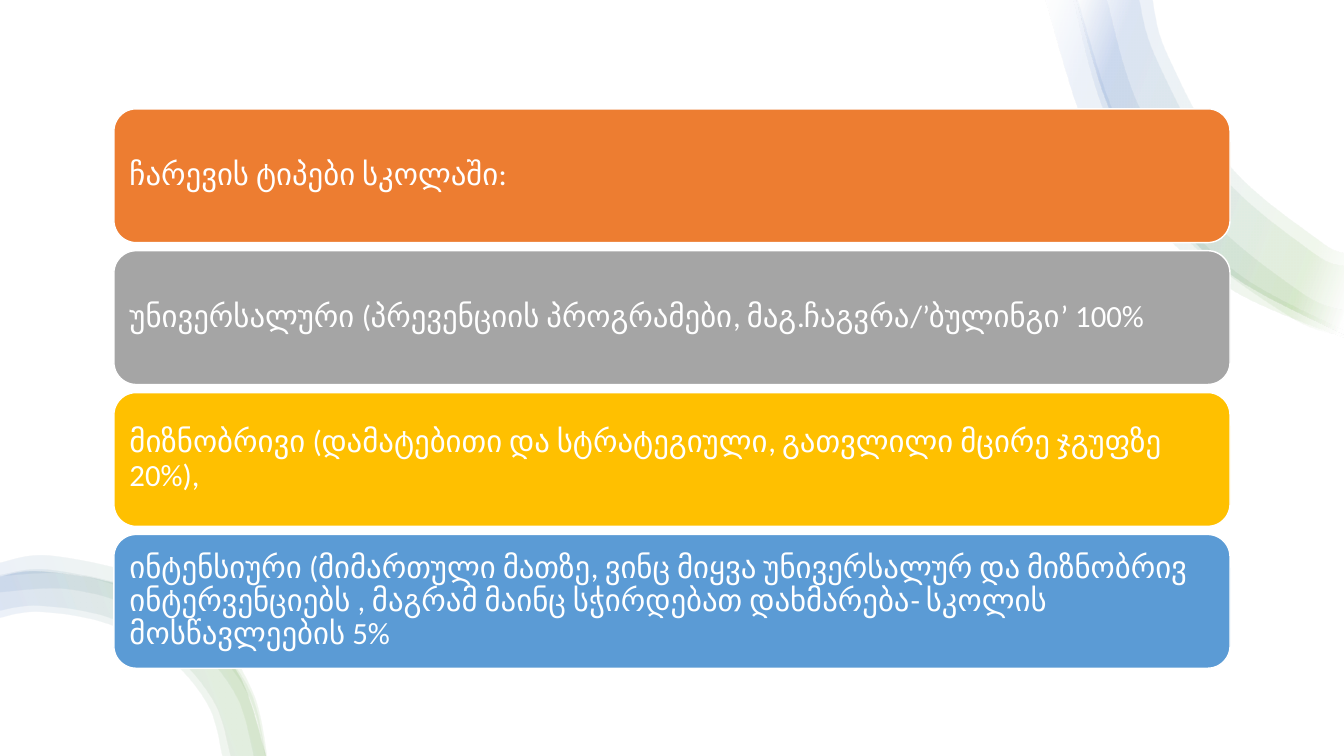
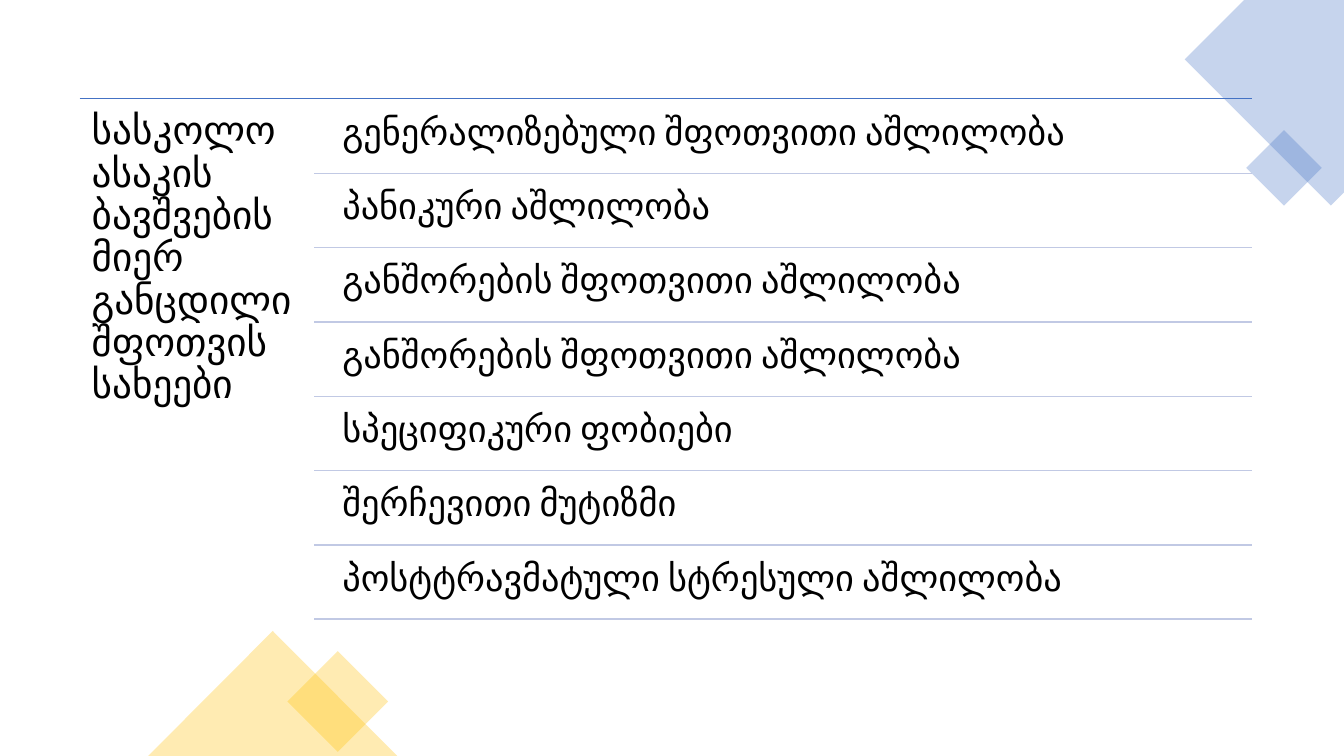
from lxml import etree
from pptx import Presentation
from pptx.dml.color import RGBColor
from pptx.enum.shapes import MSO_CONNECTOR, MSO_SHAPE
from pptx.enum.text import MSO_ANCHOR, PP_ALIGN
from pptx.oxml.ns import qn
from pptx.util import Inches, Pt

LINE = MSO_CONNECTOR.STRAIGHT
ROUND = MSO_SHAPE.ROUNDED_RECTANGLE
PLAIN = MSO_SHAPE.RECTANGLE
DIAMOND = MSO_SHAPE.DIAMOND
PEAK = MSO_SHAPE.ISOSCELES_TRIANGLE
MIDDLE, TOP = MSO_ANCHOR.MIDDLE, MSO_ANCHOR.TOP
LEFT = PP_ALIGN.LEFT

WIDE, HIGH = 13.33, 7.5
FONT = "Calibri"
COLORS = {
    "white": "FFFFFF", "black": "000000", "blue": "4472C4",
    "green": "70AD47", "gold": "FFC000", "orange": "ED7D31",
    "gray": "A5A5A5", "sky": "5B9BD5", "rule": "C1C9E4",
}
FADE = [(2, "white"), (16, "green"), (85, "blue"), (100, "white")]

ARC = [(0.35, 0), (0.67, 1.07), (1.19, 2), (1.9, 2.74), (3, 3.32)]
CREST = [
    ([(0.04, 0), (0.45, 1.31), (0.97, 2.08), (1.88, 2.87), (3, 3.35)],
     [(3, 3.28), (1.97, 2.73), (1.26, 2.01), (0.73, 1.15), (0.36, 0)]),
    (ARC, [(3, 2.51), (2.74, 2.38), (1.86, 1.64), (1.25, 0.55), (1.1, 0)]),
    ([(0.32, 0), (0.66, 1.19), (1.4, 2.33), (2.46, 3.14), (3, 3.33)],
     [(3, 3.08), (2.57, 2.9), (1.62, 2.11), (0.96, 1.04), (0.65, 0)]),
    (ARC, [(3, 2.64), (2.68, 2.5), (1.77, 1.72), (1.14, 0.59), (0.97, 0)]),
]
BEND = [(0, 0.22), (0.4, 0.17), (1.17, 0.3), (1.85, 0.66), (2.36, 1.19), (2.63, 2)]
FOOT = [
    (BEND, [(2.2, 2), (2.06, 1.5), (1.66, 1.02), (1.07, 0.69), (0.4, 0.57), (0, 0.63)]),
    (BEND, [(2.28, 2), (2.12, 1.47), (1.7, 0.97), (1.09, 0.63), (0.4, 0.51), (0, 0.56)]),
    ([(0, 0.21), (0.5, 0.16), (1.42, 0.37), (2.03, 0.77), (2.47, 1.35), (2.63, 2)],
     [(2.51, 2), (2.34, 1.41), (1.92, 0.89), (1.34, 0.53), (0.67, 0.35), (0, 0.38)]),
    ([(0, 0.09), (0.51, 0.02), (1.48, 0.25), (2.1, 0.73), (2.5, 1.37), (2.64, 2)],
     [(2.62, 2), (2.45, 1.39), (2, 0.81), (1.39, 0.41), (0.69, 0.2), (0, 0.22)]),
]

BARS = [
    ("orange", "ჩარევის ტიპები სკოლაში:"),
    ("gray", "უნივერსალური (პრევენციის პროგრამები, მაგ.ჩაგვრა/’ბულინგი’ 100%"),
    ("gold", "მიზნობრივი (დამატებითი და სტრატეგიული, გათვლილი მცირე ჯგუფზე 20%),"),
    ("sky", "ინტენსიური (მიმართული მათზე, ვინც მიყვა უნივერსალურ და მიზნობრივ "
            "ინტერვენციებს , მაგრამ მაინც სჭირდებათ დახმარება- სკოლის მოსწავლეების 5%"),
]
HEAD = "სასკოლო ასაკის ბავშვების მიერ განცდილი შფოთვის სახეები"
ROWS = [
    "გენერალიზებული შფოთვითი აშლილობა",
    "პანიკური აშლილობა",
    "განშორების შფოთვითი აშლილობა",
    "განშორების შფოთვითი აშლილობა",
    "სპეციფიკური ფობიები",
    "შერჩევითი მუტიზმი",
    "პოსტტრავმატული სტრესული აშლილობა",
]


def tone(name):
    return RGBColor.from_string(COLORS[name])


def box(*sizes):
    return [Inches(size) for size in sizes]


def write(shape, text, size, color="black", inset=0.12, anchor=TOP):
    frame = shape.text_frame
    frame.word_wrap = True
    frame.vertical_anchor = anchor
    frame.margin_left = frame.margin_right = Inches(inset)
    frame.margin_top = frame.margin_bottom = Inches(inset)
    para = frame.paragraphs[0]
    para.alignment = LEFT
    para.line_spacing = 0.9
    run = para.add_run()
    run.text = text
    run.font.name = FONT
    run.font.size = Pt(size)
    run.font.color.rgb = tone(color)


def paint(shape, color, alpha=100):
    shape.shadow.inherit = False
    shape.line.fill.background()
    shape.fill.solid()
    shape.fill.fore_color.rgb = tone(color)
    if alpha < 100:
        hue = shape.fill._xPr.find(qn("a:solidFill"))[0]
        etree.SubElement(hue, qn("a:alpha"), val=str(alpha * 1000))


def blend(shape, angle, alpha=10):
    paint(shape, "white")
    solid = shape._element.spPr.find(qn("a:solidFill"))
    grad = etree.Element(qn("a:gradFill"), rotWithShape="1")
    stops = etree.SubElement(grad, qn("a:gsLst"))
    for place, name in FADE:
        stop = etree.SubElement(stops, qn("a:gs"), pos=str(place * 1000))
        hue = etree.SubElement(stop, qn("a:srgbClr"), val=COLORS[name])
        etree.SubElement(hue, qn("a:alpha"), val=str(alpha * 1000))
    etree.SubElement(grad, qn("a:lin"), ang=str(angle * 60000), scaled="0")
    solid.getparent().replace(solid, grad)


def curve(knots):
    ends = [knots[0], *knots, knots[-1]]
    points = [knots[0]]
    for a, b, c, d in zip(ends, ends[1:], ends[2:], ends[3:]):
        points.append(tuple(q + (r - p) / 6 for p, q, r in zip(a, b, c)))
        points.append(tuple(r - (s - q) / 6 for q, r, s in zip(b, c, d)))
        points.append(c)
    return points


def outline(slide, left, top, points):
    spots = [box(left + x, top + y) for x, y in points]
    pen = slide.shapes.build_freeform(*spots[0])
    pen.add_line_segments(spots[1:], close=True)
    return pen.convert_to_shape()


def soften(shape, join):
    lines = list(shape._element.iter(qn("a:lnTo")))
    bends = lines[:join] + lines[join + 1:]
    for i in range(0, len(bends), 3):
        arc = etree.Element(qn("a:cubicBezTo"))
        bends[i].addprevious(arc)
        for line in bends[i:i + 3]:
            arc.append(line[0])
            line.getparent().remove(line)


def swoosh(slide, left, top, bands, angle):
    for outer, inner in bands:
        rim = curve(outer)
        band = outline(slide, left, top, rim + curve(inner))
        soften(band, len(rim) - 1)
        blend(band, angle)


def stack(slide, left, top, width, height, gap=0.08):
    tall = (height - gap * (len(BARS) - 1)) / len(BARS)
    for i, (color, text) in enumerate(BARS):
        place = box(left, top + i * (tall + gap), width, tall)
        bar = slide.shapes.add_shape(ROUND, *place)
        paint(bar, color)
        bar.line.color.rgb = tone("white")
        bar.line.width = Pt(1)
        write(bar, text, 22, color="white", inset=0.09, anchor=MIDDLE)


def rule(slide, left, top, width, color):
    line = slide.shapes.add_connector(LINE, *box(left, top, left + width, top))
    line.line.color.rgb = tone(color)
    line.line.width = Pt(1)
    etree.SubElement(line._element.spPr, qn("a:effectLst"))


def index(slide, left, top, width, height):
    side = width * 0.2
    step = (height - 0.04) / len(ROWS)
    rule(slide, left, top, width, "blue")
    label = slide.shapes.add_textbox(*box(left, top, side, height))
    write(label, HEAD, 28)
    for i, text in enumerate(ROWS):
        y = top + 0.04 + i * step
        place = box(left + side + 0.17, y, width - side - 0.17, 0.7)
        write(slide.shapes.add_textbox(*place), text, 26, inset=0.11)
        rule(slide, left + side, y + 0.7, width - side, "rule")


def corner(slide, left, top):
    points = [(1.58, 0), (0.59, 0), (0, 0.59), (1.45, 2.04), (1.58, 1.91)]
    paint(outline(slide, left, top, points), "blue", 30)
    place = box(left + 0.61, top + 1.29, 0.75, 0.75)
    paint(slide.shapes.add_shape(DIAMOND, *place), "blue", 30)


def base(slide, left, top):
    place = box(left + 1.38, top + 0.2, 1, 1)
    paint(slide.shapes.add_shape(DIAMOND, *place), "gold", 30)
    place = box(left, top, 2.47, 1.24)
    paint(slide.shapes.add_shape(PEAK, *place), "gold", 30)


def main():
    deck = Presentation()
    deck.slide_width, deck.slide_height = box(WIDE, HIGH)
    blank = deck.slide_layouts[6]

    types = deck.slides.add_slide(blank)
    paint(types.shapes.add_shape(PLAIN, *box(0, 0, WIDE, HIGH)), "white")
    swoosh(types, 10.33, 0, CREST, 200)
    swoosh(types, 0, 5.5, FOOT, 160)
    stack(types, 1.13, 1.08, 11.07, 5.55)

    kinds = deck.slides.add_slide(blank)
    corner(kinds, 11.75, 0)
    base(kinds, 1.47, 6.26)
    index(kinds, 0.79, 0.98, 11.63, 5.2)

    deck.save("out.pptx")


if __name__ == "__main__":
    main()
